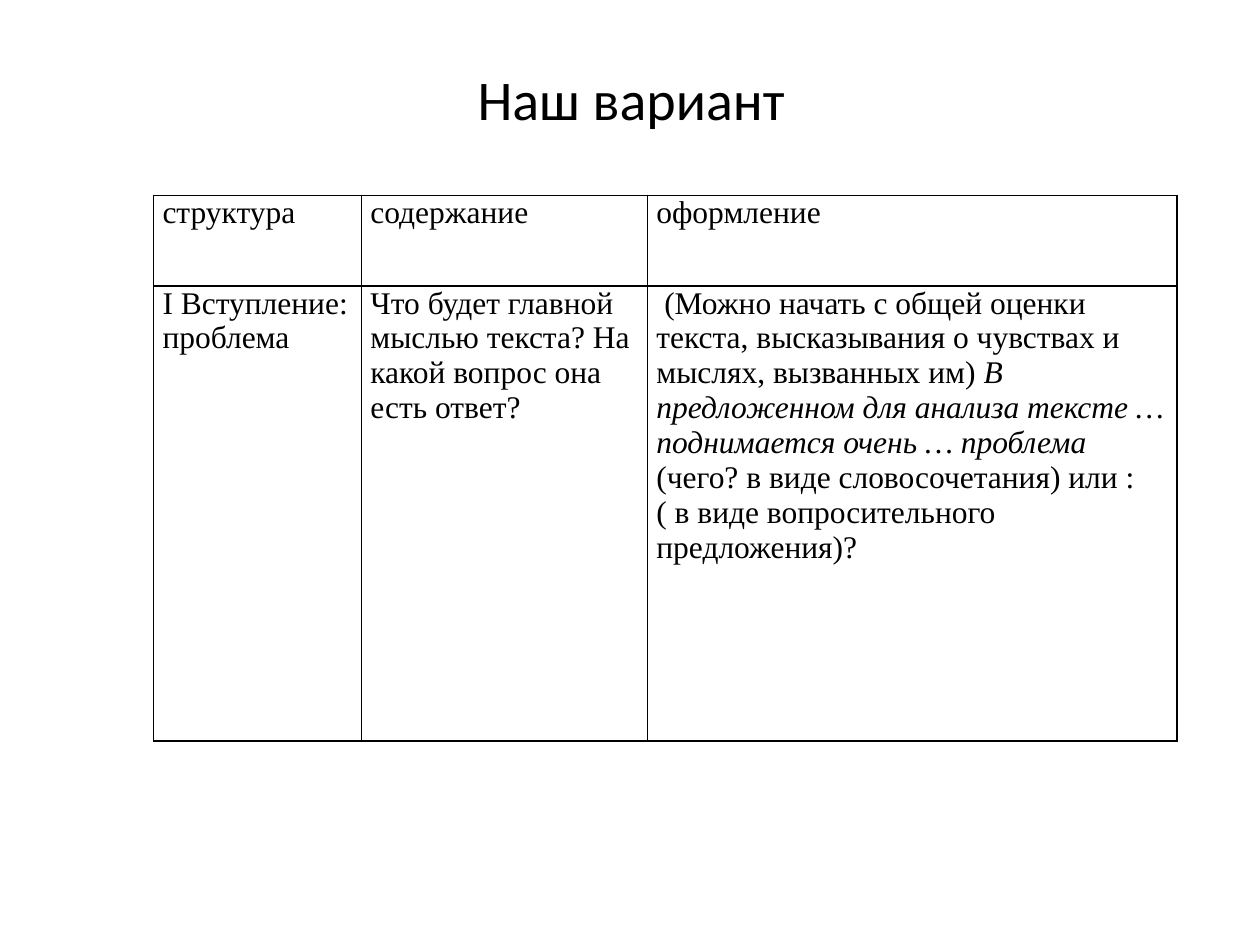
from pptx import Presentation
from pptx import util as u
from pptx.dml.color import RGBColor
from pptx.enum import text
from pptx.oxml import parse_xml
from pptx.oxml.ns import nsdecls


def colour(value):
    return RGBColor.from_string(value)


class SlideBuilder:
    ink = "000000"
    title_font, title_size = "Calibri", 32
    table_font, table_size = "Times New Roman", 18
    cell_margin = 0.07
    border_width = 1

    def __init__(self, slide):
        self.slide = slide

    def style(self, paragraph, name, size):
        paragraph.font.name = name
        paragraph.font.size = u.Pt(size)
        paragraph.font.color.rgb = colour(self.ink)

    def title(self, wording, left, top, width, height):
        box = self.slide.shapes.add_textbox(*map(u.Inches, (left, top, width, height)))
        frame = box.text_frame
        frame.word_wrap = True
        frame.vertical_anchor = text.MSO_ANCHOR.MIDDLE
        paragraph = frame.paragraphs[0]
        paragraph.text = wording
        paragraph.alignment = text.PP_ALIGN.CENTER
        self.style(paragraph, self.title_font, self.title_size)

    def border(self, cell):
        properties = cell._tc.get_or_add_tcPr()
        for position, side in enumerate(("lnL", "lnR", "lnT", "lnB")):
            line = parse_xml(
                f'<a:{side} {nsdecls("a")} w="{u.Pt(self.border_width)}"><a:solidFill>'
                f'<a:srgbClr val="{self.ink}"/></a:solidFill></a:{side}>')
            properties.insert(position, line)

    def cell(self, cell, runs):
        cell.fill.background()
        cell.margin_left = cell.margin_right = u.Inches(self.cell_margin)
        cell.margin_top = cell.margin_bottom = 0
        paragraph = cell.text_frame.paragraphs[0]
        self.style(paragraph, self.table_font, self.table_size)
        for wording, italic in runs:
            run = paragraph.add_run()
            run.text = wording
            run.font.italic = italic
        self.border(cell)

    def table(self, rows, left, top, widths, heights):
        frame = self.slide.shapes.add_table(
            len(heights), len(widths),
            *map(u.Inches, (left, top, sum(widths), sum(heights))))
        table = frame.table
        table.first_row = table.horz_banding = False
        for column, width in zip(table.columns, widths):
            column.width = u.Inches(width)
        for row, height, contents in zip(table.rows, heights, rows):
            row.height = u.Inches(height)
            for cell, content in zip(row.cells, contents):
                runs = [(content, False)] if isinstance(content, str) else content
                self.cell(cell, runs)


def main():
    presentation = Presentation()
    presentation.slide_width = u.Inches(10)
    presentation.slide_height = u.Inches(7.5)
    slide = presentation.slides.add_slide(presentation.slide_layouts[6])
    builder = SlideBuilder(slide)

    # Title
    builder.title("Наш вариант", 0.51, 0.23, 9, 1.1)

    # Essay plan: plain cells are strings, mixed ones are (wording, italic) runs
    introduction = [
        (" ", True),
        ("(Можно начать с общей оценки текста, высказывания о чувствах "
         "и мыслях, вызванных им) ", False),
        ("В предложенном для анализа тексте … поднимается очень … проблема", True),
        (" (чего? в виде словосочетания) или : "
         "( в виде вопросительного предложения)?", False),
    ]
    rows = [
        ["структура", "содержание", "оформление"],
        ["I Вступление: проблема",
         "Что будет главной мыслью текста? На какой вопрос она есть ответ?",
         introduction],
    ]
    builder.table(rows, 1.22, 1.55, widths=(1.65, 2.27, 4.2), heights=(0.72, 3.61))

    presentation.save("out.pptx")


if __name__ == "__main__":
    main()
